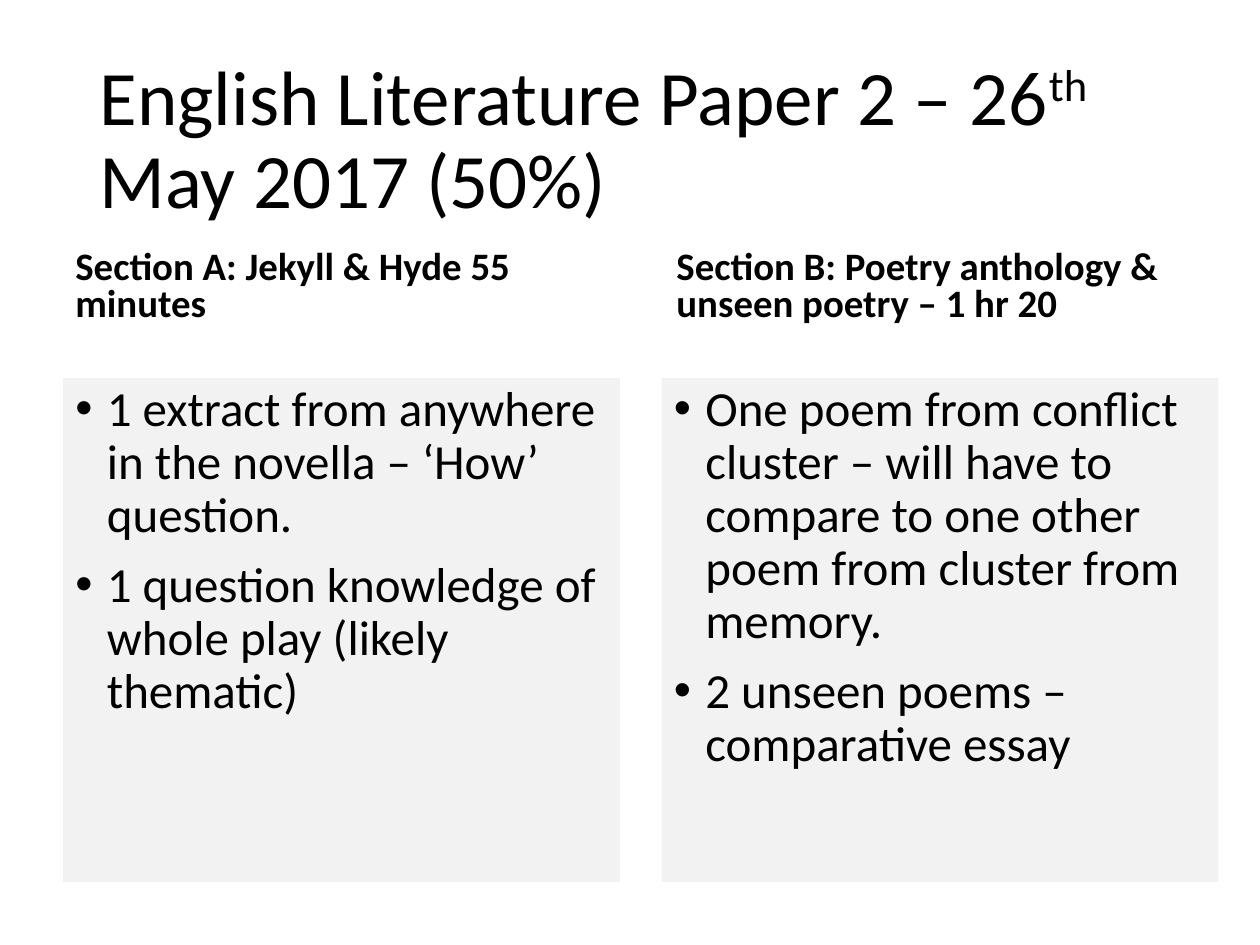
from dataclasses import dataclass

import pptx
import pptx.dml.color
import pptx.enum.shapes
import pptx.enum.text
import pptx.oxml
import pptx.oxml.ns
import pptx.util

Pt = pptx.util.Pt
Anchor = pptx.enum.text.MSO_ANCHOR
FONT = "Calibri"
BLACK = "000000"
PANEL_GREY = "F2F2F2"
COLUMN_WIDTH = 318.24
HEADING_TOP, HEADING_HEIGHT = 138.96, 50.4
PANEL_TOP, PANEL_HEIGHT = 216, 288
BULLET_INDENT = 18


@dataclass
class Section:
    heading: str
    points: list[str]
    heading_left: float
    panel_left: float


SECTIONS = [
    Section(
        "Section A: Jekyll & Hyde 55 minutes",
        [
            "1 extract from anywhere in the novella – ‘How’ question.",
            "1 question knowledge of whole play (likely thematic)",
        ],
        heading_left=36,
        panel_left=36,
    ),
    Section(
        "Section B: Poetry anthology & unseen poetry – 1 hr 20",
        [
            "One poem from conflict cluster – will have to compare to one other "
            "poem from cluster from memory.",
            "2 unseen poems – comparative essay",
        ],
        heading_left=379.44,
        panel_left=378,
    ),
]


def color(value: str) -> pptx.dml.color.RGBColor:
    return pptx.dml.color.RGBColor.from_string(value)


def format_frame(text_frame, anchor, size: float, spacing: float,
                 before: float = 0, bold: bool = False) -> None:
    text_frame.word_wrap = True
    text_frame.auto_size = pptx.enum.text.MSO_AUTO_SIZE.NONE
    text_frame.vertical_anchor = anchor
    for paragraph in text_frame.paragraphs:
        paragraph.alignment = pptx.enum.text.PP_ALIGN.LEFT
        paragraph.line_spacing = spacing
        paragraph.space_before = Pt(before)
        for run in paragraph.runs:
            run.font.name = FONT
            run.font.size = Pt(size)
            run.font.bold = bold
            run.font.color.rgb = color(BLACK)


def add_bullet(paragraph) -> None:
    properties = paragraph._p.get_or_add_pPr()
    properties.set("marL", str(Pt(BULLET_INDENT)))
    properties.set("indent", str(-Pt(BULLET_INDENT)))
    namespace = pptx.oxml.ns.nsdecls("a")
    for xml in (f'<a:buFont {namespace} typeface="Arial"/>',
                f'<a:buChar {namespace} char="•"/>'):
        properties.append(pptx.oxml.parse_xml(xml))


def draw_title(slide) -> None:
    title = slide.shapes.title
    title.left, title.top = Pt(49.68), Pt(28.8)
    title.width, title.height = Pt(620.64), Pt(104.4)
    paragraph = title.text_frame.paragraphs[0]
    for text in ("English Literature Paper 2 – 26", "th", " May 2017 (50%)"):
        paragraph.add_run().text = text
    format_frame(title.text_frame, Anchor.MIDDLE, 44, 0.9)
    paragraph.runs[1].font._element.set("baseline", "30000")


def draw_section(slide, section: Section) -> None:
    heading = slide.shapes.add_textbox(
        Pt(section.heading_left), Pt(HEADING_TOP), Pt(COLUMN_WIDTH), Pt(HEADING_HEIGHT))
    heading.text_frame.text = section.heading
    format_frame(heading.text_frame, Anchor.BOTTOM, 22.2, 0.8, before=10, bold=True)

    panel = slide.shapes.add_shape(
        pptx.enum.shapes.MSO_SHAPE.RECTANGLE,
        Pt(section.panel_left), Pt(PANEL_TOP), Pt(COLUMN_WIDTH), Pt(PANEL_HEIGHT))
    panel.shadow.inherit = False
    panel.fill.solid()
    panel.fill.fore_color.rgb = color(PANEL_GREY)
    panel.line.fill.background()
    panel.text_frame.text = "\n".join(section.points)
    format_frame(panel.text_frame, Anchor.TOP, 28, 0.9, before=10)
    for paragraph in panel.text_frame.paragraphs:
        add_bullet(paragraph)


def main() -> None:
    presentation = pptx.Presentation()
    presentation.slide_width, presentation.slide_height = Pt(720), Pt(540)
    slide = presentation.slides.add_slide(presentation.slide_layouts[5])
    draw_title(slide)
    for section in SECTIONS:
        draw_section(slide, section)
    presentation.save("out.pptx")


if __name__ == "__main__":
    main()
